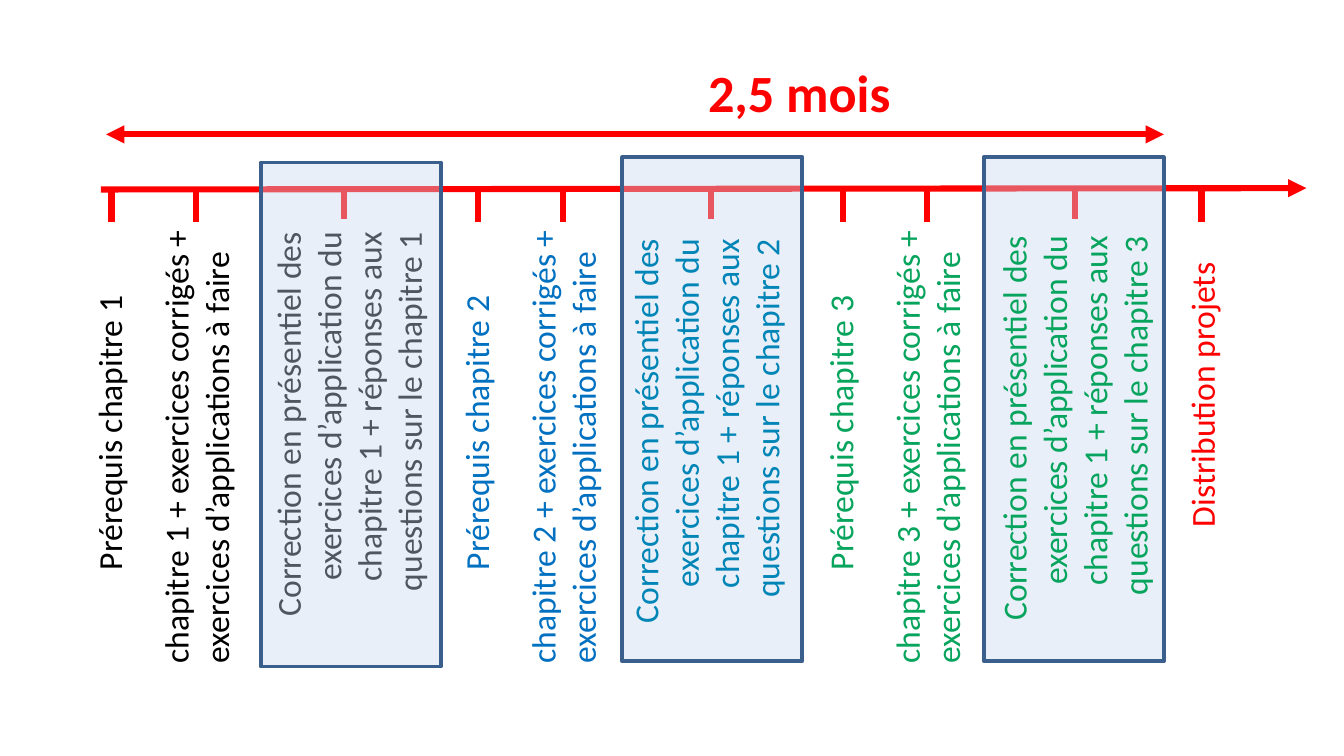
from lxml.etree import SubElement
from pptx import Presentation
from pptx.dml.color import RGBColor
from pptx.enum.shapes import MSO_CONNECTOR as Connector, MSO_SHAPE as Shape
from pptx.enum.text import MSO_AUTO_SIZE as AutoSize, PP_ALIGN as Align
from pptx.oxml.ns import qn
from pptx.util import Inches, Pt

# Content: one entry per chapter, with its place on the time axis
CHAPTERS = [
    {"number": 1, "start": 0.83, "color": "000000", "review_color": "000000",
     "review_at": (0.99, 2.58), "panel_top": 1.21, "panel_over_text": True},
    {"number": 2, "start": 3.56, "color": "0070C0", "review_color": "0085B6",
     "review_at": (3.65, 2.63), "panel_top": 1.17, "panel_over_text": False},
    {"number": 3, "start": 6.27, "color": "07A45D", "review_color": "07A45D",
     "review_at": (6.39, 2.61), "panel_top": 1.17, "panel_over_text": False},
]
PREREQUISITE = "Prérequis chapitre {}"
LESSON = "chapitre {} + exercices corrigés + exercices d’applications à faire"
REVIEW = ("Correction en présentiel des exercices d’application du "
          "chapitre 1 + réponses aux questions sur le chapitre {}")
PROJECTS = "Distribution projets"
DURATION = "2,5 mois"

THEME = {"font": "Calibri", "axis": "FF0000", "panel": "C6D9F1",
         "panel_edge": "3A5F8C", "panel_opacity": 40, "label": 18,
         "duration": 28, "axis_width": 3.25, "edge_width": 2}

# Layout in inches, on a 16:9 slide
SLIDE_W = 10
SLIDE_H = SLIDE_W * 9 / 16
AXIS_Y, SPAN_Y = 1.41, 1
LESSON_STEP, REVIEW_STEP = 0.63, 1.73
LABEL_Y = 3.19
SHORT, LONG, REVIEW_SIZE = (2.3, 0.4), (3.69, 0.71), (3.21, 1.31)
PANEL_LEFT, PANEL_PITCH, PANEL_W, PANEL_H = 1.94, 2.69, 1.34, 3.75
PROJECTS_X = 8.94

deck = Presentation()
deck.slide_width, deck.slide_height = Inches(SLIDE_W), Inches(SLIDE_H)
page = deck.slides.add_slide(deck.slide_layouts[6])


def add_line(start, end, arrows=()):
    line = page.shapes.add_connector(
        Connector.STRAIGHT, *(Inches(v) for v in (*start, *end)))
    line.line.color.rgb = RGBColor.from_string(THEME["axis"])
    line.line.width = Pt(THEME["axis_width"])
    properties = line._element.spPr
    for arrow in arrows:
        SubElement(properties.find(qn("a:ln")), qn(f"a:{arrow}"), type="triangle")
    SubElement(properties, qn("a:effectLst"))


def add_tick(x, top=AXIS_Y, height=0.24):
    add_line((x, top), (x, top + height))


def centered(x, y, size):
    return x - size[0] / 2, y - size[1] / 2


def add_label(text, place, size, color, points=THEME["label"],
              rotation=270, align=Align.LEFT, bold=False):
    box = page.shapes.add_textbox(*(Inches(v) for v in (*place, *size)))
    box.rotation = rotation
    box.text_frame.word_wrap = True
    box.text_frame.auto_size = AutoSize.SHAPE_TO_FIT_TEXT
    para = box.text_frame.paragraphs[0]
    para.alignment = align
    span = para.add_run()
    span.text = text
    style = {"name": THEME["font"], "size": Pt(points), "bold": bold}
    for key, value in style.items():
        setattr(span.font, key, value)
    span.font.color.rgb = RGBColor.from_string(color)


def add_panel(left, top):
    panel = page.shapes.add_shape(
        Shape.RECTANGLE, *(Inches(v) for v in (left, top, PANEL_W, PANEL_H)))
    panel.shadow.inherit = False
    panel.fill.solid()
    panel.fill.fore_color.rgb = RGBColor.from_string(THEME["panel"])
    tint = panel._element.spPr.find(qn("a:solidFill"))[0]
    SubElement(tint, qn("a:alpha"), val=str(THEME["panel_opacity"] * 1000))
    panel.line.color.rgb = RGBColor.from_string(THEME["panel_edge"])
    panel.line.width = Pt(THEME["edge_width"])


# Time axis
add_line((0.75, AXIS_Y), (9.72, 1.4), ["tailEnd"])

# Chapters: prerequisite, lesson, then review session in its panel
for index, chapter in enumerate(CHAPTERS):
    number, start = chapter["number"], chapter["start"]
    steps = [(start, -0.02, PREREQUISITE, SHORT),
             (start + LESSON_STEP, 0, LESSON, LONG)]
    for x, shift, text, size in steps:
        add_tick(x)
        add_label(text.format(number), centered(x + shift, LABEL_Y, size),
                  size, chapter["color"])
    add_tick(start + REVIEW_STEP, 1.4, 0.23)

    panel_place = (PANEL_LEFT + index * PANEL_PITCH, chapter["panel_top"])
    if not chapter["panel_over_text"]:
        add_panel(*panel_place)
    add_label(REVIEW.format(number), chapter["review_at"], REVIEW_SIZE,
              chapter["review_color"], align=Align.RIGHT)
    if chapter["panel_over_text"]:
        add_panel(*panel_place)

# Projects
add_tick(PROJECTS_X)
add_label(PROJECTS, centered(PROJECTS_X, 2.87, SHORT), SHORT, THEME["axis"])

# Total duration
add_line((0.79, SPAN_Y), (8.66, SPAN_Y), ["headEnd", "tailEnd"])
add_label(DURATION, (5.17, 0.4), (2.05, 0.57), THEME["axis"],
          THEME["duration"], rotation=0, bold=True)

deck.save("out.pptx")
